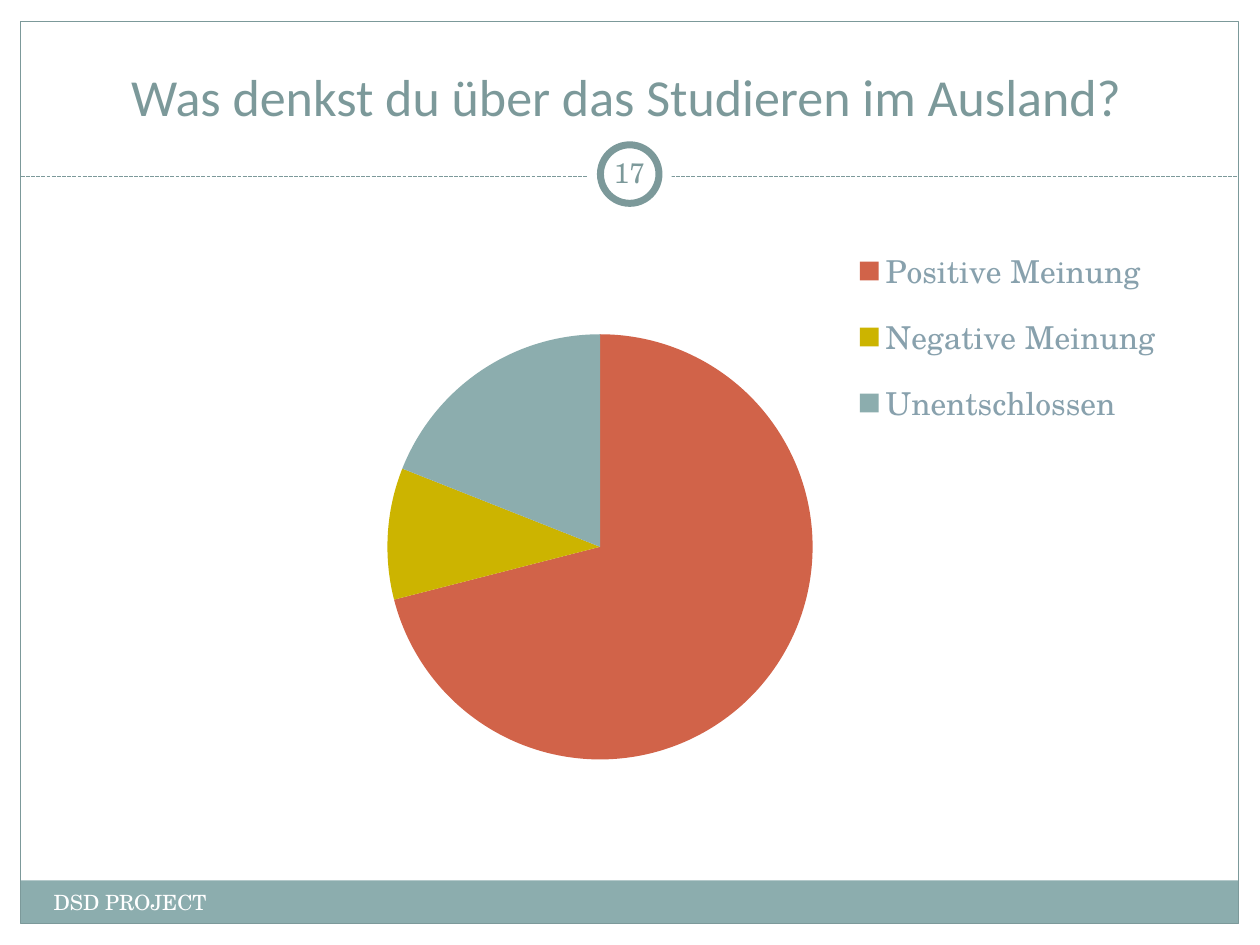
from collections import namedtuple

from lxml import etree
from pptx import Presentation
from pptx.chart.data import CategoryChartData
from pptx.dml.color import RGBColor
from pptx.enum.chart import XL_CHART_TYPE, XL_LEGEND_POSITION
from pptx.enum.dml import MSO_LINE
from pptx.enum.shapes import MSO_CONNECTOR, MSO_SHAPE
from pptx.enum.text import MSO_ANCHOR, PP_ALIGN
from pptx.oxml import parse_xml
from pptx.oxml.ns import qn
from pptx.util import Cm, Pt

PIE = XL_CHART_TYPE.PIE
RIGHT = XL_LEGEND_POSITION.RIGHT
DASH = MSO_LINE.SQUARE_DOT
STRAIGHT = MSO_CONNECTOR.STRAIGHT
RECTANGLE, OVAL = MSO_SHAPE.RECTANGLE, MSO_SHAPE.OVAL
TOP, MIDDLE, BOTTOM = MSO_ANCHOR.TOP, MSO_ANCHOR.MIDDLE, MSO_ANCHOR.BOTTOM
LEFT, CENTER = PP_ALIGN.LEFT, PP_ALIGN.CENTER

SANS, SERIF = "Calibri", "TeX Gyre Schola"
TEAL, PALE_TEAL, WHITE, SLATE = "7C999A", "8CADAE", "FFFFFF", "88A1AD"
OPINIONS = [
    ("Positive Meinung", 71, "D16349"),
    ("Negative Meinung", 10, "CCB400"),
    ("Unentschlossen", 19, PALE_TEAL),
]
CHART_NS = "http://schemas.openxmlformats.org/drawingml/2006/chart"

Box = namedtuple("Box", "left top width height")


def color(value):
    """Turn a hex string into a colour."""
    return RGBColor.from_string(value)


def lengths(box):
    """Convert a box in centimetres to slide lengths."""
    return [Cm(value) for value in box]


def add_figure(page, kind, box, fill=None, line=None, weight=0.75):
    """Add a preset shape with an optional fill and outline."""
    figure = page.shapes.add_shape(kind, *lengths(box))
    figure.shadow.inherit = False
    if fill:
        figure.fill.solid()
        figure.fill.fore_color.rgb = color(fill)
    else:
        figure.fill.background()
    if line:
        figure.line.color.rgb = color(line)
        figure.line.width = Pt(weight)
    else:
        figure.line.fill.background()


def add_text(page, box, text, font, size, tint, align=LEFT, anchor=TOP, inset=0.25):
    """Add a one-line text box."""
    frame = page.shapes.add_textbox(*lengths(box)).text_frame
    frame.word_wrap = True
    frame.vertical_anchor = anchor
    frame.margin_left = frame.margin_right = Cm(inset)
    frame.margin_top = frame.margin_bottom = Cm(0.13)
    para = frame.paragraphs[0]
    para.alignment = align
    span = para.add_run()
    span.text = text
    span.font.name = font
    span.font.size = Pt(size)
    span.font.color.rgb = color(tint)


def draw_frame(page, box, footer):
    """Draw the page border and the footer band along its bottom."""
    band = Box(box.left, box.top + box.height - 0.87, box.width, 0.87)
    add_figure(page, RECTANGLE, band, fill=PALE_TEAL)
    add_figure(page, RECTANGLE, box, line=TEAL)
    label = Box(band.left + 0.41, band.top + 0.05, 9.96, 1.02)
    add_text(page, label, footer, SERIF, 12, WHITE)


def draw_header(page, box, title, number):
    """Draw the title above a dashed rule with the numbered badge on it."""
    rule = box.top + box.height
    line = page.shapes.add_connector(
        STRAIGHT, Cm(box.left), Cm(rule), Cm(box.left + box.width), Cm(rule))
    line.line.color.rgb = color(TEAL)
    line.line.width = Pt(0.75)
    line.line.dash_style = DASH
    etree.SubElement(line._element.spPr, qn("a:effectLst"))

    center = box.left + box.width / 2
    middle = rule - 0.05
    for size, outline in ((1.7, None), (1.18, TEAL)):
        disc = Box(center - size / 2, middle - size / 2, size, size)
        add_figure(page, OVAL, disc, WHITE, outline, 4)
    badge = Box(center - 0.64, middle - 0.64, 1.27, 1.22)
    add_text(page, badge, number, SERIF, 16, TEAL, CENTER, MIDDLE, 0.13)

    heading = Box(box.left + 0.36, box.top + 0.15, box.width - 0.84, 2.11)
    add_text(page, heading, title, SANS, 29.7, TEAL, CENTER, BOTTOM)


def set_layout(element, area, target=""):
    """Fix the place of a chart part as fractions of the chart."""
    for old in element.findall(qn("c:layout")):
        element.remove(old)
    places = "".join(
        f'<c:{name} val="{value}"/>' for name, value in zip("xywh", area))
    layout = parse_xml(
        f'<c:layout xmlns:c="{CHART_NS}"><c:manualLayout>{target}'
        '<c:xMode val="edge"/><c:yMode val="edge"/>'
        f'{places}</c:manualLayout></c:layout>')
    return layout


def draw_chart(page, box):
    """Draw the pie of opinions with its legend at the upper right."""
    data = CategoryChartData()
    data.categories = [name for name, _, _ in OPINIONS]
    data.add_series("Meinung", [share for _, share, _ in OPINIONS])
    chart = page.shapes.add_chart(PIE, *lengths(box), data).chart
    chart.has_title = False
    chart.font.name = SERIF
    chart.font.size = Pt(18)

    plot = chart.plots[0]
    plot.vary_by_categories = True
    for index, (_, _, fill) in enumerate(OPINIONS):
        wedge = plot.series[0].points[index].format
        wedge.fill.solid()
        wedge.fill.fore_color.rgb = color(fill)
        wedge.line.fill.background()

    chart.has_legend = True
    legend = chart.legend
    legend.position = RIGHT
    legend.include_in_layout = False
    legend.font.name = SERIF
    legend.font.size = Pt(18)
    legend.font.color.rgb = color(SLATE)

    area = chart._chartSpace.find(".//" + qn("c:plotArea"))
    inner = '<c:layoutTarget val="inner"/>'
    area.insert(0, set_layout(area, (0.05, 0.21, 0.51, 0.76), inner))
    key = legend._element
    layout = set_layout(key, (0.59, 0.02, 0.4, 0.39))
    key.find(qn("c:legendPos")).addnext(layout)


def main():
    """Build the deck and save it."""
    deck = Presentation()
    deck.slide_width, deck.slide_height = Cm(25.4), Cm(19.05)
    page = deck.slides.add_slide(deck.slide_layouts[6])
    draw_frame(page, Box(0.42, 0.43, 24.55, 18.19), "DSD PROJECT")
    draw_header(page, Box(0.42, 0.43, 24.55, 3.13),
                "Was denkst du über das Studieren im Ausland?", "17")
    draw_chart(page, Box(6.93, 4.37, 16.94, 11.28))
    deck.save("out.pptx")


if __name__ == "__main__":
    main()
